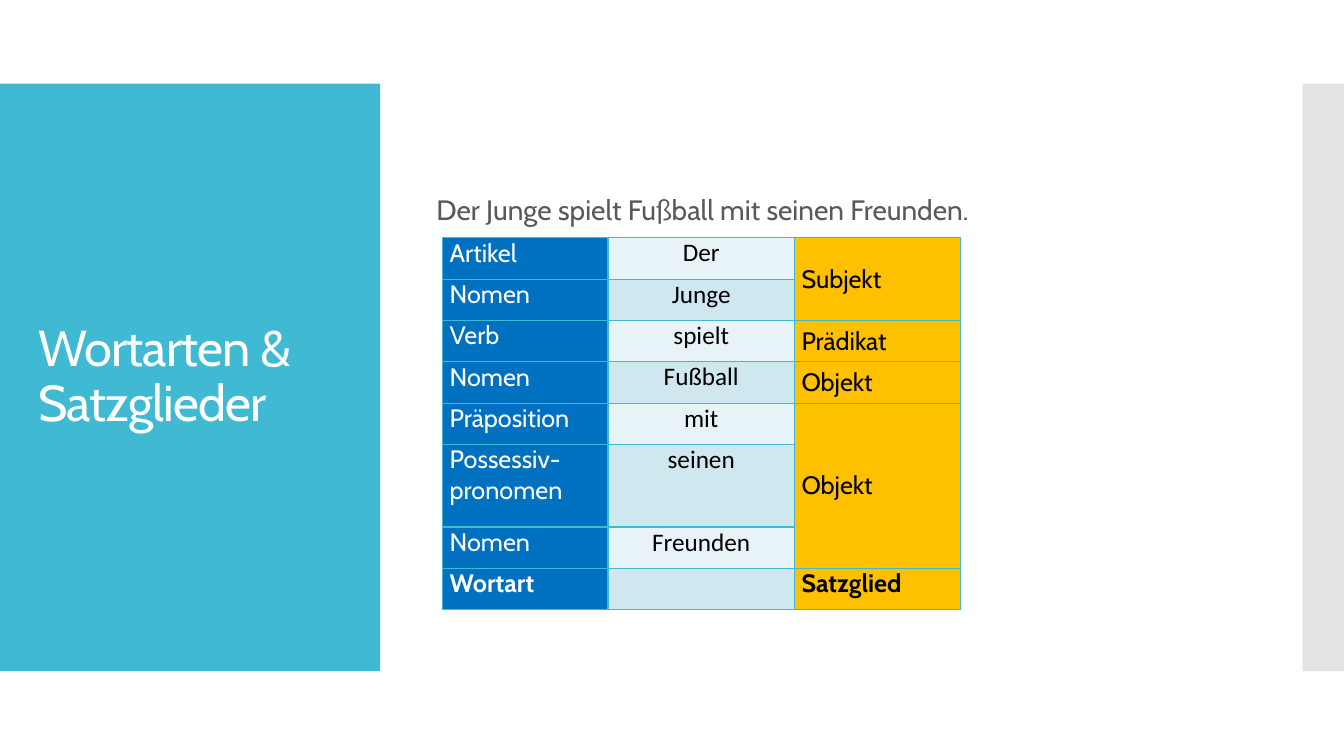
from pptx import Presentation
from pptx.dml.color import RGBColor
from pptx.enum.shapes import MSO_SHAPE
from pptx.enum.text import MSO_ANCHOR, PP_ALIGN
from pptx.oxml import parse_xml
from pptx.oxml.ns import nsdecls, qn
from pptx.util import Inches, Pt
from lxml.etree import SubElement

COLORS = {
    "teal": "40BAD2",
    "grey": "C8C8C8",
    "white": "FFFFFF",
    "black": "000000",
    "sentence": "595959",
    "blue": "0070C0",
    "yellow": "FFC000",
    "light": "E8F3F7",
    "medium": "CFE7EE",
}
COLUMN_WIDTHS = [1.64, 1.85, 1.65]
ROW_HEIGHT = 0.41

# Part of speech, word, sentence part, rows covered by the sentence part
ROWS = [
    ("Artikel", "Der", "Subjekt", 2),
    ("Nomen", "Junge", "", 0),
    ("Verb", "spielt", "Prädikat", 1),
    ("Nomen", "Fußball", "Objekt", 1),
    ("Präposition", "mit", "Objekt", 3),
    ("Possessiv-pronomen", "seinen", "", 0),
    ("Nomen", "Freunden", "", 0),
    ("Wortart", "", "Satzglied", 1),
]


def color(name):
    return RGBColor.from_string(COLORS[name])


def style_paragraph(paragraph, size, color_name, font="Cabin", bold=False):
    paragraph.font.name = font
    paragraph.font.size = Pt(size)
    paragraph.font.bold = bold
    paragraph.font.color.rgb = color(color_name)


def add_panel(slide, left, width, color_name, opacity=100):
    panel = slide.shapes.add_shape(
        MSO_SHAPE.RECTANGLE, Inches(left), Inches(0.83), Inches(width), Inches(5.83))
    panel.shadow.inherit = False
    panel.line.fill.background()
    panel.fill.solid()
    panel.fill.fore_color.rgb = color(color_name)
    if opacity < 100:
        rgb = panel.fill._xPr.find(qn("a:solidFill")).find(qn("a:srgbClr"))
        SubElement(rgb, qn("a:alpha")).set("val", str(opacity * 1000))


def format_title(title, text):
    title.left, title.top = Inches(0.28), Inches(1.23)
    title.width, title.height = Inches(3.22), Inches(5.03)
    frame = title.text_frame
    frame.text = text
    frame.word_wrap = True
    frame.vertical_anchor = MSO_ANCHOR.MIDDLE
    paragraph = frame.paragraphs[0]
    paragraph.alignment = PP_ALIGN.LEFT
    paragraph.line_spacing = 0.9
    style_paragraph(paragraph, 36, "white")
    paragraph.runs[0].font._element.set("spc", "-60")


def add_sentence(slide, text):
    box = slide.shapes.add_textbox(Inches(4.23), Inches(1.9), Inches(8), Inches(0.4))
    frame = box.text_frame
    frame.word_wrap = True
    frame.text = text
    frame.paragraphs[0].line_spacing = 0.9
    style_paragraph(frame.paragraphs[0], 20, "sentence")


def add_borders(cell, color_name):
    properties = cell._tc.get_or_add_tcPr()
    for side in ("lnL", "lnR", "lnT", "lnB"):
        properties.append(parse_xml(
            f'<a:{side} {nsdecls("a")} w="12700"><a:solidFill>'
            f'<a:srgbClr val="{COLORS[color_name]}"/></a:solidFill></a:{side}>'))


def fill_cell(cell, text, fill, text_color, font="Cabin", bold=False,
              alignment=PP_ALIGN.LEFT, anchor=MSO_ANCHOR.TOP):
    add_borders(cell, "teal")
    cell.fill.solid()
    cell.fill.fore_color.rgb = color(fill)
    cell.margin_left = cell.margin_right = Inches(0.07)
    cell.margin_top = cell.margin_bottom = 0
    cell.vertical_anchor = anchor
    cell.text = text
    paragraph = cell.text_frame.paragraphs[0]
    paragraph.alignment = alignment
    style_paragraph(paragraph, 18, text_color, font, bold)


def add_word_table(slide):
    frame = slide.shapes.add_table(
        len(ROWS), len(COLUMN_WIDTHS), Inches(4.39), Inches(2.36),
        Inches(sum(COLUMN_WIDTHS)), Inches(ROW_HEIGHT * (len(ROWS) + 1)))
    table = frame.table
    for column, width in zip(table.columns, COLUMN_WIDTHS):
        column.width = Inches(width)
    for index, (word_class, word, part, span) in enumerate(ROWS):
        is_legend = index == len(ROWS) - 1
        lines = 2 if "-" in word_class else 1
        table.rows[index].height = Inches(ROW_HEIGHT * lines)
        fill_cell(table.cell(index, 0), word_class, "blue", "white", bold=is_legend)
        fill_cell(table.cell(index, 1), word, "medium" if index % 2 else "light",
                  "black", font="Calibri", alignment=PP_ALIGN.CENTER)
        fill_cell(table.cell(index, 2), part, "yellow", "black", bold=is_legend,
                  anchor=MSO_ANCHOR.TOP if is_legend else MSO_ANCHOR.MIDDLE)
        if span > 1:
            table.cell(index, 2).merge(table.cell(index + span - 1, 2))


def main():
    presentation = Presentation()
    presentation.slide_width = Inches(13.33)
    presentation.slide_height = Inches(7.5)
    slide = presentation.slides.add_slide(presentation.slide_layouts[5])

    # Side panels
    add_panel(slide, 0, 3.77, "teal")
    add_panel(slide, 12.92, 0.41, "grey", opacity=50)

    # Title, brought in front of the panels
    title = slide.shapes.title
    slide.shapes._spTree.append(title._element)
    format_title(title, "Wortarten & Satzglieder")

    # Example sentence and its analysis
    add_sentence(slide, "Der Junge spielt Fußball mit seinen Freunden.")
    add_word_table(slide)

    presentation.save("out.pptx")


if __name__ == "__main__":
    main()
